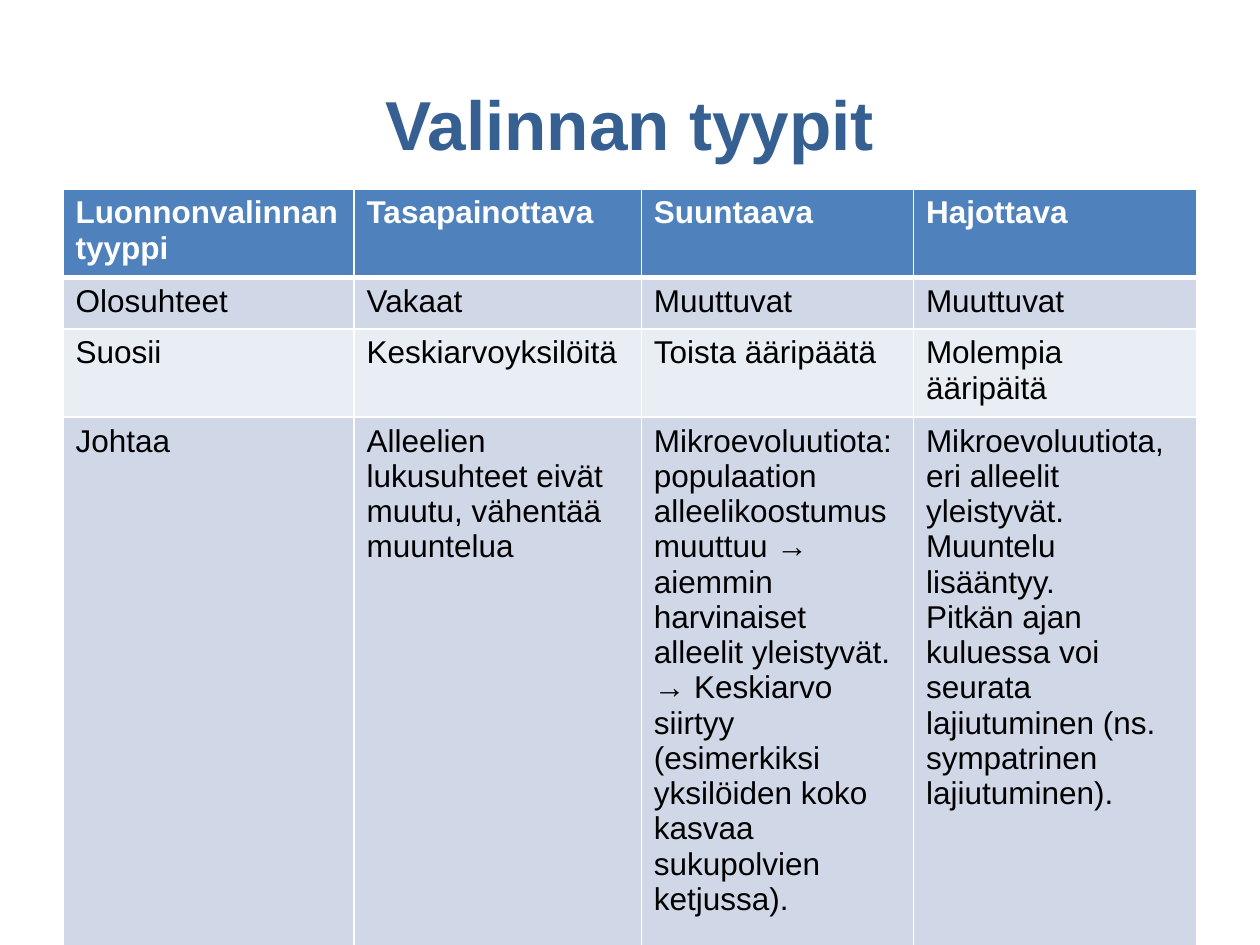
from lxml import etree
from pptx import Presentation
from pptx import util as u
from pptx.dml.color import RGBColor
from pptx.enum import text
from pptx.oxml.ns import qn

HEAD, BANDS = "4F81BD", ("D0D8E8", "E9EDF4")
BLUE, WHITE, BLACK = "376092", "FFFFFF", "000000"

COLS = [2.31, 2.28, 2.16, 2.25]
ROW = 0.41
ROWS = [
    ["Luonnonvalinnan tyyppi", "Tasapainottava", "Suuntaava", "Hajottava"],
    ["Olosuhteet", "Vakaat", "Muuttuvat", "Muuttuvat"],
    ["Suosii", "Keskiarvoyksilöitä", "Toista ääripäätä", "Molempia ääripäitä"],
    ["Johtaa",
     "Alleelien lukusuhteet eivät muutu, vähentää muuntelua",
     "Mikroevoluutiota: populaation alleelikoostumus muuttuu → aiemmin "
     "harvinaiset alleelit yleistyvät. → Keskiarvo siirtyy (esimerkiksi "
     "yksilöiden koko kasvaa sukupolvien ketjussa).",
     "Mikroevoluutiota, eri alleelit yleistyvät. Muuntelu lisääntyy.\n"
     "Pitkän ajan kuluessa voi seurata lajiutuminen (ns. sympatrinen "
     "lajiutuminen)."],
]


def color(code):
    return RGBColor.from_string(code)


class Deck:
    font = "Arial"

    def __init__(self, wide, high):
        self.prs = Presentation()
        self.prs.slide_width = u.Inches(wide)
        self.prs.slide_height = u.Inches(high)
        self.slide = self.prs.slides.add_slide(self.prs.slide_layouts[6])

    def x(self, share):
        return round(self.prs.slide_width * share)

    def y(self, share):
        return round(self.prs.slide_height * share)

    def runs(self, para, words, size, tint, bold):
        for i, line in enumerate(words.split("\n")):
            if i:
                para.add_line_break()
            run = para.add_run()
            run.text = line
            run.font.name = self.font
            run.font.size = u.Pt(size)
            run.font.bold = bold
            run.font.color.rgb = color(tint)

    def title(self, words, left, top, wide, high):
        box = self.slide.shapes.add_textbox(
            self.x(left), self.y(top), self.x(wide), self.y(high))
        frame = box.text_frame
        frame.word_wrap = True
        frame.vertical_anchor = text.MSO_ANCHOR.MIDDLE
        para = frame.paragraphs[0]
        para.alignment = text.PP_ALIGN.CENTER
        self.runs(para, words, 39.6, BLUE, True)

    def edge(self, side, width):
        line = etree.Element(qn("a:" + side), w=str(u.Pt(width)))
        fill = etree.SubElement(line, qn("a:solidFill"))
        etree.SubElement(fill, qn("a:srgbClr"), val=WHITE)
        return line

    def cell(self, cell, words, row):
        head = row == 0
        cell.fill.solid()
        cell.fill.fore_color.rgb = color(HEAD if head else BANDS[(row - 1) % 2])
        self.runs(cell.text_frame.paragraphs[0], words, 18,
                  WHITE if head else BLACK, head)
        # Borders come before the fill; the header rule is thicker
        widths = {"lnL": 1, "lnR": 1, "lnT": 3 if row == 1 else 1,
                  "lnB": 3 if head else 1}
        props = cell._tc.get_or_add_tcPr()
        for i, (side, width) in enumerate(widths.items()):
            props.insert(i, self.edge(side, width))

    def table(self, rows, cols, left, top):
        grid = self.slide.shapes.add_table(
            len(rows), len(cols), self.x(left), self.y(top),
            u.Inches(sum(cols)), u.Inches(ROW * len(rows))).table
        for col, wide in zip(grid.columns, cols):
            col.width = u.Inches(wide)
        for r, row in enumerate(rows):
            for c, words in enumerate(row):
                self.cell(grid.cell(r, c), words, r)


def main():
    deck = Deck(10, 7.5)
    # Heading
    deck.title("Valinnan tyypit", 0.05, 0.075, 0.9, 0.11)
    # Comparison of the selection types
    deck.table(ROWS, COLS, 0.05, 0.2)
    deck.prs.save("out.pptx")


if __name__ == "__main__":
    main()
